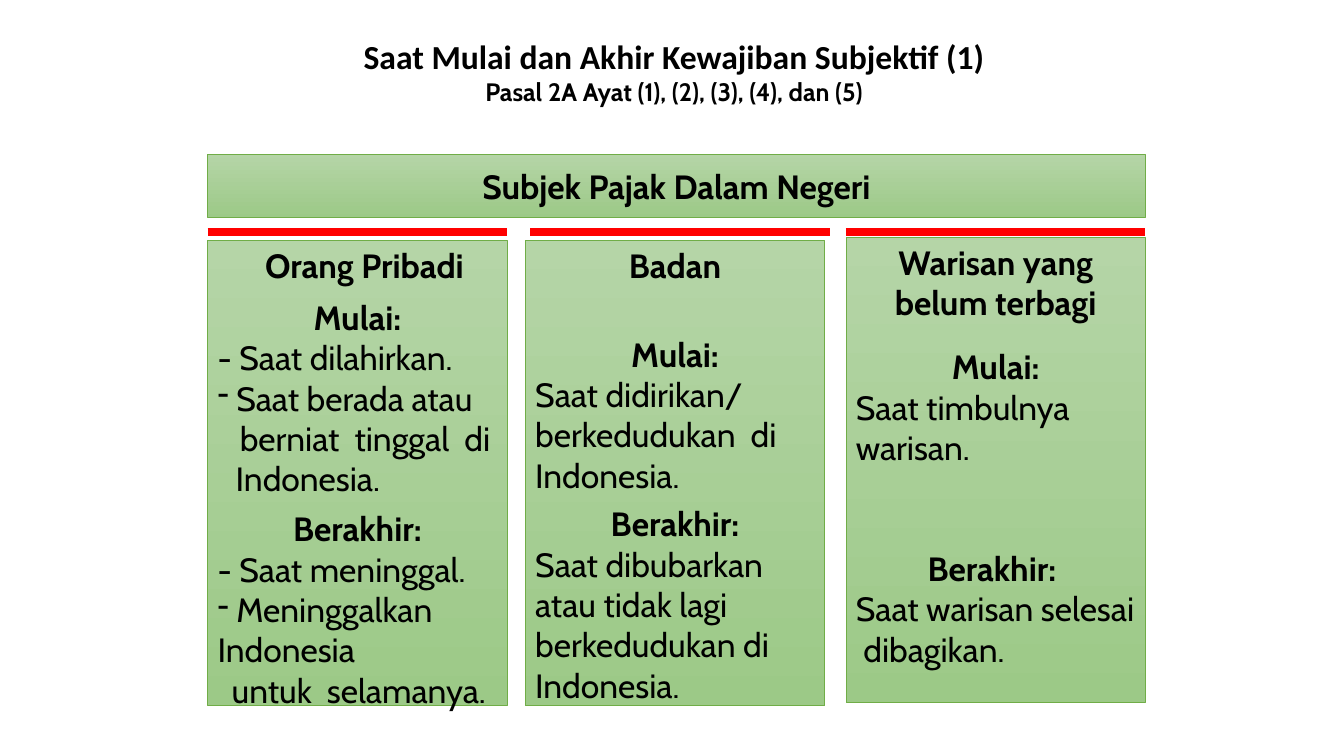
from lxml import etree
from pptx import Presentation
from pptx.dml.color import RGBColor
from pptx.enum import shapes, text
from pptx.oxml import ns
from pptx.util import Inches, Pt

BLACK = RGBColor(0, 0, 0)
RED = RGBColor(0xFF, 0, 0)
GREEN_EDGE = RGBColor(0x70, 0xAD, 0x47)
GREEN_TOP = RGBColor(0xB5, 0xD5, 0xA7)
GREEN_BOTTOM = RGBColor(0x9C, 0xC9, 0x87)
LEFT, CENTER, JUSTIFY = (text.PP_ALIGN.LEFT, text.PP_ALIGN.CENTER,
                         text.PP_ALIGN.JUSTIFY)

COLUMN_WIDTH, COLUMN_HEIGHT = 2.97, 4.62
RULE_Y = 2.3


def heading(wording, gap=0, margin=0):
    return dict(wording=wording, gap=gap, margin=margin, bold=True, align=CENTER)


def detail(wording, **layout):
    return dict(wording=wording, **layout)


# left edge, top edge, left edge of the red rule, paragraphs
COLUMNS = [
    (2.06, 2.38, 2.06, [
        heading("Orang Pribadi", margin=0.14),
        heading("Mulai:", gap=8.4),
        detail("- Saat dilahirkan."),
        detail(" Saat berada atau", dash=True),
        detail("berniat  tinggal  di Indonesia.", margin=0.18, indent=0.04),
        heading("Berakhir:", gap=7),
        detail("- Saat meninggal.", align=JUSTIFY),
        detail(" Meninggalkan Indonesia", dash=True),
        detail("untuk  selamanya.", margin=0.14),
    ]),
    (5.21, 2.38, 5.26, [
        heading("Badan"),
        heading("Mulai:", gap=34.5),
        detail("Saat didirikan/ berkedudukan  di Indonesia."),
        heading("Berakhir:", gap=6),
        detail("Saat dibubarkan atau tidak lagi berkedudukan di Indonesia."),
    ]),
    (8.39, 2.35, 8.39, [
        heading("Warisan yang belum terbagi"),
        heading("Mulai:", gap=17),
        detail("Saat timbulnya warisan."),
        heading("Berakhir: ", gap=57.6),
        detail("Saat warisan selesai  dibagikan."),
    ]),
]


def write(paragraph, wording, size=24, font="Cabin", bold=False, align=LEFT,
          gap=0, margin=0, indent=0, dash=False):
    """Fill a paragraph; gap is the space before it in points, margins in inches."""
    run = paragraph.add_run()
    run.text = wording
    formats = dict(size=Pt(size), name=font, bold=bold)
    for attribute, value in formats.items():
        setattr(run.font, attribute, value)
    run.font.color.rgb = BLACK
    paragraph.alignment = align
    paragraph.space_before = Pt(gap)
    properties = paragraph._p.get_or_add_pPr()
    properties.set("marL", str(Inches(margin)))
    properties.set("indent", str(Inches(indent)))
    if dash:
        etree.SubElement(properties, ns.qn("a:buChar")).set("char", "-")


def write_all(frame, paragraphs, anchor):
    frame.word_wrap = True
    frame.vertical_anchor = anchor
    for index, content in enumerate(paragraphs):
        paragraph = frame.add_paragraph() if index else frame.paragraphs[0]
        write(paragraph, **content)


def add_title(slide, left, top, width, height):
    title = slide.shapes.title
    box = dict(left=left, top=top, width=width, height=height)
    for attribute, value in box.items():
        setattr(title, attribute, Inches(value))
    write_all(title.text_frame, [
        dict(heading("Saat Mulai dan Akhir Kewajiban Subjektif (1)"), font="Calibri"),
        dict(heading("Pasal 2A Ayat (1), (2), (3), (4), dan (5)"), size=18),
    ], text.MSO_ANCHOR.MIDDLE)


def add_panel(slide, left, top, width, height, paragraphs,
              anchor=text.MSO_ANCHOR.TOP):
    panel = slide.shapes.add_shape(
        shapes.MSO_SHAPE.RECTANGLE, *map(Inches, (left, top, width, height)))
    panel.shadow.inherit = False
    panel.fill.gradient()
    panel.fill.gradient_angle = 270
    for stop, color, position in zip(panel.fill.gradient_stops,
                                     (GREEN_TOP, GREEN_BOTTOM), (0, 1)):
        stop.color.rgb = color
        stop.position = position
    panel.line.color.rgb = GREEN_EDGE
    panel.line.width = Pt(0.5)
    write_all(panel.text_frame, paragraphs, anchor)


def add_rule(slide, left, y, width):
    rule = slide.shapes.add_connector(
        shapes.MSO_CONNECTOR.STRAIGHT, *map(Inches, (left, y, left + width, y)))
    rule.line.color.rgb = RED
    rule.line.width = Pt(6)
    etree.SubElement(rule._element.spPr, ns.qn("a:effectLst"))


def main():
    deck = Presentation()
    deck.slide_width, deck.slide_height = Inches(13.33), Inches(7.5)
    slide = deck.slides.add_slide(deck.slide_layouts[5])
    add_title(slide, 3.07, 0.17, 7.23, 1.08)
    add_panel(slide, 2.06, 1.53, 9.3, 0.63,
              [heading("Subjek Pajak Dalam Negeri")], text.MSO_ANCHOR.MIDDLE)
    for left, top, rule_left, paragraphs in COLUMNS:
        add_rule(slide, rule_left, RULE_Y, COLUMN_WIDTH)
        add_panel(slide, left, top, COLUMN_WIDTH, COLUMN_HEIGHT, paragraphs)
    deck.save("out.pptx")


if __name__ == "__main__":
    main()
